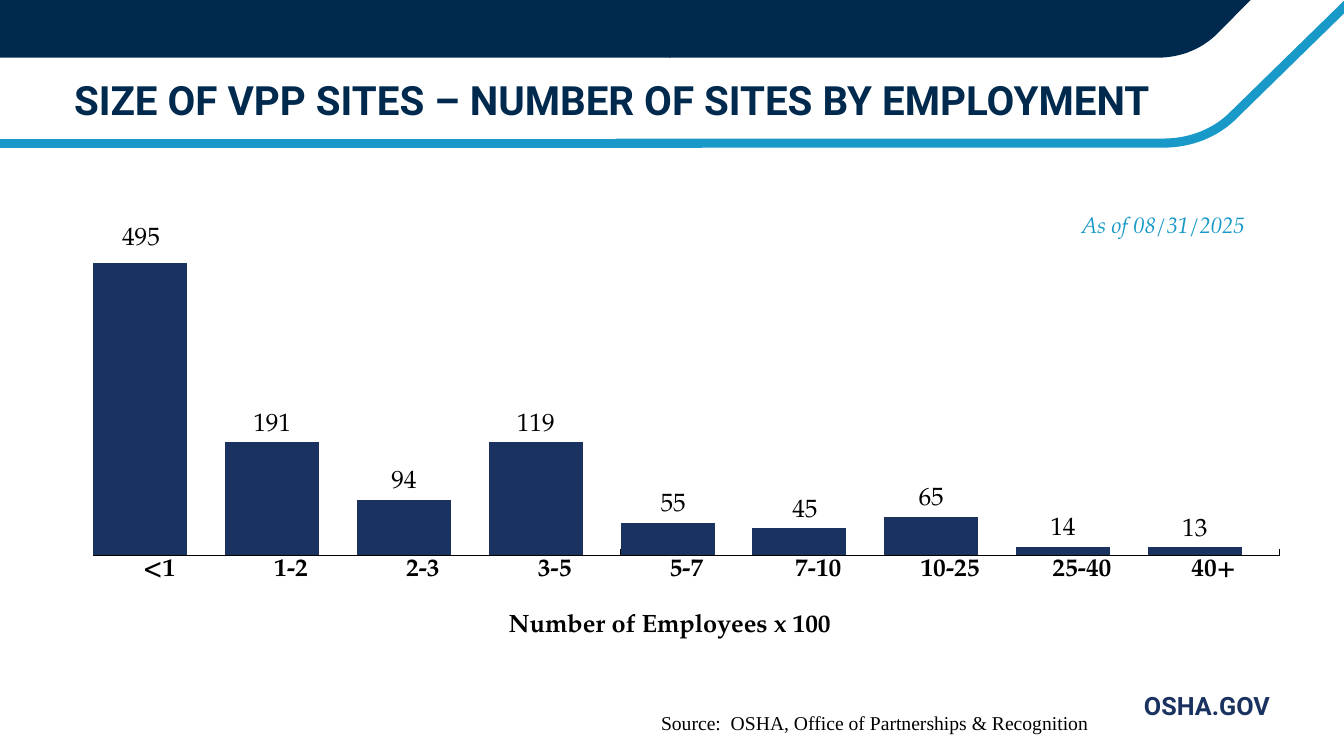
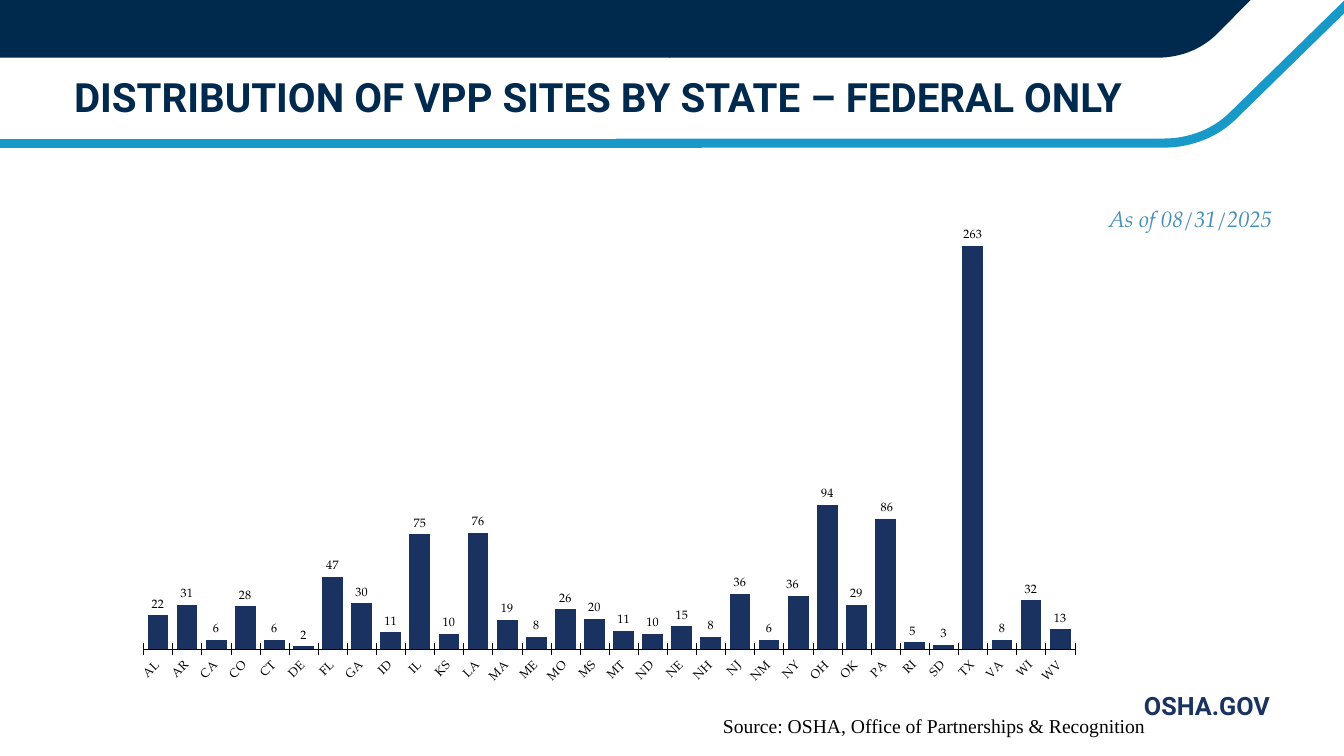
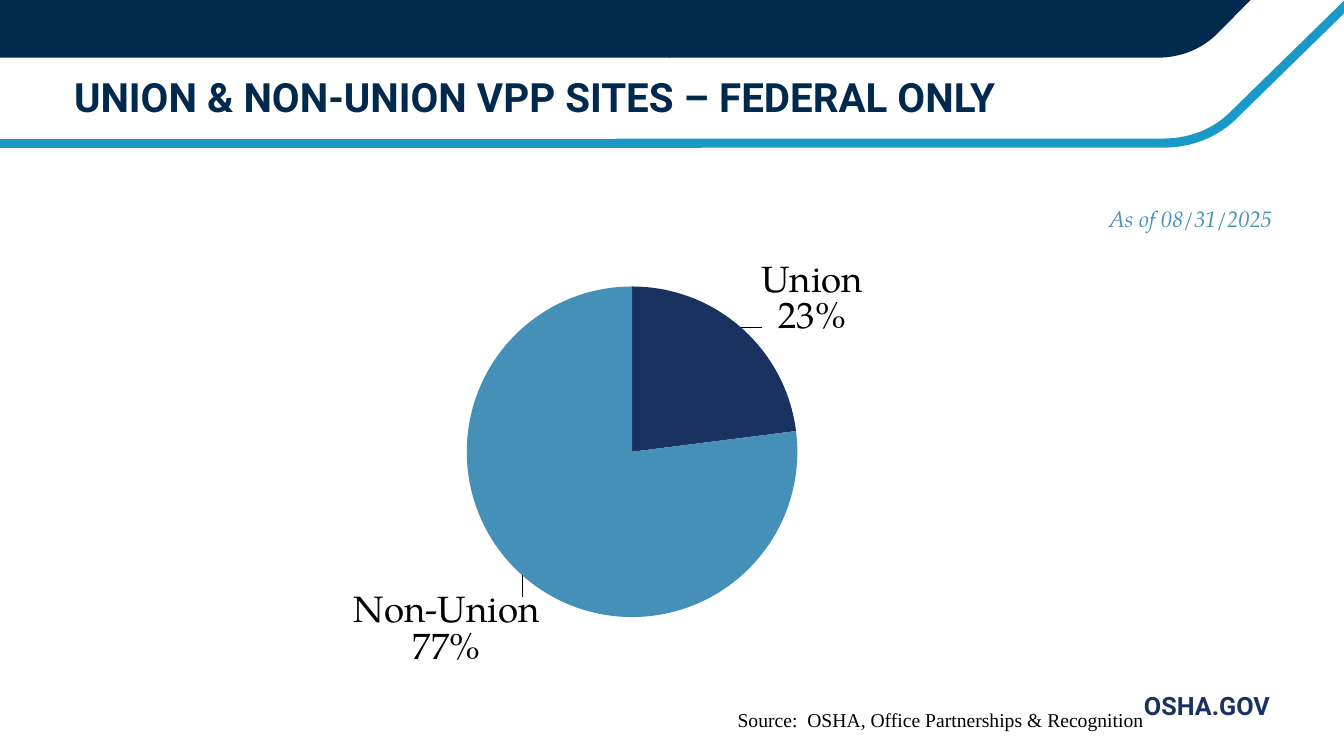
from dataclasses import dataclass

from lxml.etree import SubElement
from pptx import Presentation
from pptx.chart.data import CategoryChartData
from pptx.dml.color import RGBColor
from pptx.enum.chart import XL_CHART_TYPE as ChartType
from pptx.enum.chart import XL_LABEL_POSITION as LabelPosition
from pptx.enum.chart import XL_TICK_LABEL_POSITION as TickLabels
from pptx.enum.chart import XL_TICK_MARK as Tick
from pptx.enum.shapes import MSO_CONNECTOR as Connector
from pptx.enum.shapes import MSO_SHAPE as Preset
from pptx.enum.text import MSO_ANCHOR as Anchor
from pptx.enum.text import PP_ALIGN as Align
from pptx.oxml.ns import qn
from pptx.util import Pt


@dataclass(frozen=True)
class Theme:
    band: str = "00294E"
    stripe: str = "1999C8"
    navy: str = "1A3260"
    sky: str = "4590B8"
    aqua: str = "45CBE8"
    ink: str = "000000"
    heading: str = "Roboto"
    body: str = "TeX Gyre Pagella"
    plain: str = "Times New Roman"
    title_size: float = 28.8
    site_size: float = 18
    date_size: float = 16
    source_size: float = 14


THEME = Theme()
WIDTH, HEIGHT = 960, 540
AS_OF = "As of 08/31/2025"

# Boxes are (left, top, width, height) in points; plots are fractions of the chart.
# Own labels map a category to (text, shift right, shift down) in points.
SIZE_CHART = dict(
    box=(45.8, 127.5, 868.3, 334), plot=(0.024, 0.05, 0.976, 0.766), size=18.1,
    bold=True, maximum=600, gap=0, overlap=80, tick=Tick.INSIDE,
    axis_title="Number of Employees x 100", title_at=(0.362, 0.929),
    cats=["<1", "1-2", "2-3", "3-5", "5-7", "7-10", "10-25", "25-40", "40+"],
    series=[
        ("Series 1", [495, 191, 94, 191, 55, 45, 65, 14, 13], THEME.navy),
        ("Series 2", [None] * 9, THEME.sky),
        ("Series 3", [None] * 9, THEME.aqua),
    ],
    own_labels={"<1": ("495", 0.5, -5), "3-5": ("119", 0, 0),
                "5-7": ("55", 4, 0), "7-10": ("45", 4, 0)},
)
STATE_CHART = dict(
    box=(99, 18.7, 678.2, 480.2), plot=(0.005, 0.242, 0.981, 0.685), size=8.7,
    bold=False, maximum=300, gap=40, overlap=0, tick=Tick.CROSS, rotation=-45,
    cats=("AL AR CA CO CT DE FL GA ID IL KS LA MA ME MO MS "
          "MT ND NE NH NJ NM NY OH OK PA RI SD TX VA WI WV").split(),
    series=[("Series 1", [22, 29, 6, 28, 6, 2, 47, 30, 11, 75, 10, 76, 19, 8, 26, 20,
                          12, 10, 15, 8, 36, 6, 35, 94, 29, 85, 5, 3, 263, 6, 32, 13],
             THEME.navy)],
    own_labels={"AR": ("31", 0, 0), "MT": ("11", 0, 0), "NY": ("36", -4, 0),
                "PA": ("86", 1, 0), "RI": ("5", -1.5, 0.5), "VA": ("8", 0, 0)},
)
UNION_CHART = dict(
    box=(-9, 124.6, 894.2, 400.3), plot=(0.163, 0.2, 0.704, 0.59), size=26.2,
    cats=["Union", "Non-Union"], values=[23, 77], colors=[THEME.navy, THEME.sky],
    own_labels={"Union": ("Union\n23%", 11.5, 11.5),
                "Non-Union": ("Non-Union\n77%", 15, 11.5)},
)


def rgb(color):
    return RGBColor.from_string(color)


def set_font(font, size, face=THEME.body, color=THEME.ink, bold=False, italic=False):
    font.size, font.name, font.bold, font.italic = Pt(size), face, bold, italic
    font.color.rgb = rgb(color)


def add_text(page, text, place, align=Align.LEFT, anchor=Anchor.TOP, **font):
    box = page.shapes.add_textbox(*map(Pt, place))
    frame = box.text_frame
    frame.word_wrap = True
    frame.vertical_anchor = anchor
    para = frame.paragraphs[0]
    para.alignment = align
    span = para.add_run()
    span.text = text
    set_font(span.font, **font)


def bezier(start, pull_out, pull_in, end, steps=16):
    """Points along a cubic curve, both ends included."""
    points = []
    for step in range(steps + 1):
        t = step / steps
        weights = ((1 - t) ** 3, 3 * t * (1 - t) ** 2, 3 * t ** 2 * (1 - t), t ** 3)
        knots = (start, pull_out, pull_in, end)
        points.append(tuple(sum(w * k[axis] for w, k in zip(weights, knots))
                            for axis in (0, 1)))
    return points


def add_outline(page, points, close):
    first, *rest = [(Pt(x), Pt(y)) for x, y in points]
    builder = page.shapes.build_freeform(*first)
    builder.add_line_segments(rest, close=close)
    return builder.convert_to_shape()


def paint_band(shape):
    shape.shadow.inherit = False
    shape.fill.solid()
    shape.fill.fore_color.rgb = rgb(THEME.band)
    shape.line.fill.background()


def paint_stripe(line, width):
    line.color.rgb = rgb(THEME.stripe)
    line.width = Pt(width)


def add_rule(page, left, right, y, width):
    rule = page.shapes.add_connector(
        Connector.STRAIGHT, Pt(left), Pt(y), Pt(right), Pt(y))
    paint_stripe(rule.line, width)
    SubElement(rule._element.spPr, qn("a:effectLst"))


def add_frame(page):
    """Dark top band, curved stripe and site address."""
    site_box = (433.8, 489.6, 480.4, 28.8)
    add_text(page, "OSHA.GOV", site_box, align=Align.RIGHT, size=THEME.site_size,
             face=THEME.heading, color=THEME.navy, bold=True)

    curve = bezier((831.6, 102.2), (850.3, 102.2), (869, 95), (882, 81.4))
    stripe = add_outline(page, [(440, 102.2), *curve, (977, -11.5)], close=False)
    stripe.shadow.inherit = False
    stripe.fill.background()
    paint_stripe(stripe.line, 6.5)
    add_rule(page, -1.4, 440, 102.2, 6.5)

    curve = bezier((826.6, 41.2), (843.8, 41.2), (859.7, 34.7), (871.2, 22.3))
    paint_band(add_outline(
        page, [(478, 41.2), *curve, (955.2, -62.6), (478, -62.6)], close=True))
    for place in ((-1.4, -62.6, 480.2, 103.8), (458, -64, 39, 103.8)):
        paint_band(page.shapes.add_shape(Preset.RECTANGLE, *map(Pt, place)))
    add_rule(page, 378, 501.8, 103, 5.5)


def set_layout(parent, index=0, **parts):
    """Place a chart part by fractions of the chart area."""
    layout = parent.find(qn("c:layout"))
    if layout is None:
        layout = SubElement(parent, qn("c:layout"))
        parent.insert(index, layout)
    manual = SubElement(layout, qn("c:manualLayout"))
    for name, value in parts.items():
        SubElement(manual, qn(f"c:{name}")).set("val", str(value))


def add_chart(page, kind, box, plot, size, cats, series):
    data = CategoryChartData()
    data.categories = cats
    for name, values in series:
        data.add_series(name, values)
    chart = page.shapes.add_chart(kind, *map(Pt, box), data).chart
    chart.has_legend = chart.has_title = False
    set_font(chart.font, size)
    x, y, w, h = plot
    set_layout(chart._chartSpace.find(".//" + qn("c:plotArea")), layoutTarget="inner",
               xMode="edge", yMode="edge", x=x, y=y, w=w, h=h)
    return chart


def add_labels(series, size, box, cats, own_labels):
    """Label every point outside its end; some get their own text and shift."""
    labels = series.data_labels
    labels.position = LabelPosition.OUTSIDE_END
    labels.show_value = True
    set_font(labels.font, size)
    for cat, (text, right, down) in own_labels.items():
        label = series.points[cats.index(cat)].data_label
        label.text_frame.text = text
        for para in label.text_frame.paragraphs:
            set_font(para.runs[0].font, size)
        label.position = LabelPosition.OUTSIDE_END
        if right or down:
            holder = label.text_frame._txBody.getparent().getparent()
            set_layout(holder, index=1, x=round(right / box[2], 4),
                       y=round(down / box[3], 4))


def add_columns(page, box, plot, size, bold, maximum, gap, overlap, tick, cats, series,
                own_labels, axis_title=None, title_at=None, rotation=0):
    chart = add_chart(page, ChartType.COLUMN_CLUSTERED, box, plot, size, cats,
                      [(name, values) for name, values, _ in series])
    columns = chart.plots[0]
    columns.gap_width, columns.overlap = gap, overlap
    columns.vary_by_categories = False
    for item, (_, _, color) in zip(columns.series, series):
        item.format.fill.solid()
        item.format.fill.fore_color.rgb = rgb(color)
    add_labels(columns.series[0], size, box, cats, own_labels)

    value_axis = chart.value_axis
    value_axis.minimum_scale, value_axis.maximum_scale = 0, maximum
    value_axis.has_major_gridlines = False
    value_axis.major_tick_mark = Tick.NONE
    value_axis.tick_label_position = TickLabels.NONE
    value_axis.format.line.fill.background()

    axis = chart.category_axis
    axis.major_tick_mark = tick
    axis.format.line.color.rgb = rgb(THEME.ink)
    axis.format.line.width = Pt(0.25)
    set_font(axis.tick_labels.font, size, bold=bold)
    if rotation:
        body = axis._element.find(qn("c:txPr")).find(qn("a:bodyPr"))
        body.set("rot", str(rotation * 60000))
    if axis_title:
        span = axis.axis_title.text_frame.paragraphs[0].add_run()
        span.text = axis_title
        set_font(span.font, size, bold=True)
        x, y = title_at
        set_layout(axis.axis_title._element, xMode="edge", yMode="edge", x=x, y=y)


def add_pie(page, box, plot, size, cats, values, colors, own_labels):
    chart = add_chart(page, ChartType.PIE, box, plot, size, cats, [("Series 1", values)])
    pie = chart.plots[0].series[0]
    for index, color in enumerate(colors):
        fill = pie.points[index].format.fill
        fill.solid()
        fill.fore_color.rgb = rgb(color)
    add_labels(pie, size, box, cats, own_labels)


SIDE_DATE = dict(date_box=(769.3, 128.9, 162, 54), date_color=THEME.sky)
SLIDES = [
    dict(title="SIZE OF VPP SITES – NUMBER OF SITES BY EMPLOYMENT", title_top=50.8,
         draw=add_columns, chart=SIZE_CHART,
         date_box=(728.8, 133.2, 203.8, 54), date_color=THEME.stripe,
         source="Source:  OSHA, Office of Partnerships & Recognition",
         source_at=(465.1, 504)),
    dict(title="DISTRIBUTION OF VPP SITES BY STATE – FEDERAL ONLY", title_top=49,
         draw=add_columns, chart=STATE_CHART, **SIDE_DATE,
         source="Source: OSHA, Office of Partnerships & Recognition",
         source_at=(509.3, 506.4)),
    dict(title="UNION & NON-UNION VPP SITES – FEDERAL ONLY", title_top=49,
         draw=add_pie, chart=UNION_CHART, **SIDE_DATE,
         source="Source:  OSHA, Office Partnerships & Recognition",
         source_at=(519.8, 502)),
]


def add_page(deck, title, title_top, draw, chart, date_box, date_color, source, source_at):
    page = deck.slides.add_slide(deck.slide_layouts[6])
    add_frame(page)
    add_text(page, title, (45.8, title_top, 800, 40.3), anchor=Anchor.MIDDLE,
             size=THEME.title_size, face=THEME.heading, color=THEME.band, bold=True)
    draw(page, **chart)
    add_text(page, AS_OF, date_box, align=Align.CENTER, anchor=Anchor.MIDDLE,
             size=THEME.date_size, color=date_color, italic=True)
    add_text(page, source, (*source_at, 368, 24), size=THEME.source_size,
             face=THEME.plain)


def main():
    deck = Presentation()
    deck.slide_width, deck.slide_height = Pt(WIDTH), Pt(HEIGHT)
    for content in SLIDES:
        add_page(deck, **content)
    deck.save("out.pptx")


if __name__ == "__main__":
    main()
